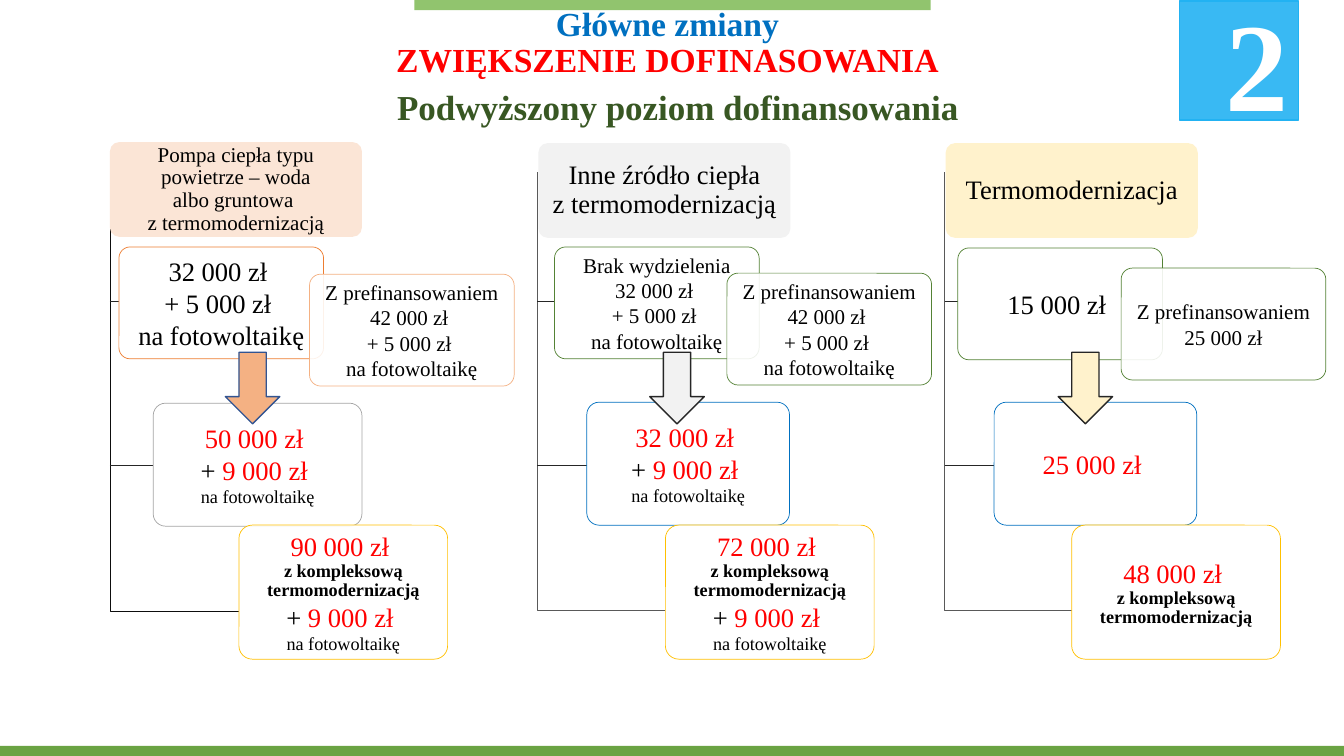
import dataclasses

import pptx
import pptx.dml.color
import pptx.enum.shapes
import pptx.enum.text
import pptx.oxml
import pptx.oxml.ns
import pptx.util

Inches = pptx.util.Inches
Shape = pptx.enum.shapes.MSO_SHAPE
Align = pptx.enum.text.PP_ALIGN
Anchor = pptx.enum.text.MSO_ANCHOR


@dataclasses.dataclass(frozen=True)
class Theme:
    font: str = "Times New Roman"
    number: int = 90
    subtitle: int = 25
    title: int = 24
    large: int = 19
    medium: int = 15
    small: int = 13
    black: str = "000000"
    white: str = "FFFFFF"
    red: str = "FF0000"
    blue: str = "0070C0"
    dark_green: str = "385723"
    green: str = "548235"
    bottom_bar: str = "6AA343"
    top_bar: str = "91C46E"
    badge: str = "39B9F3"
    badge_edge: str = "22B2F2"
    orange: str = "ED7D31"
    light_orange: str = "F4B183"
    peach: str = "FBE5D6"
    cream: str = "FFF2CC"
    pale_gray: str = "F2F2F2"
    gray: str = "A5A5A5"
    gold: str = "FFC000"
    tick: str = "262626"
    spine: str = "595959"
    first_spine: str = "0D0D0D"
    arrow_edge: str = "325491"


theme = Theme()
rgb = pptx.dml.color.RGBColor.from_string


def write(frame, paragraphs, align=Align.CENTER):
    for index, (spacing, size, color, bold, runs) in enumerate(paragraphs):
        paragraph = frame.paragraphs[0] if index == 0 else frame.add_paragraph()
        paragraph.alignment = align
        paragraph.line_spacing = spacing
        paragraph.font.name = theme.font
        paragraph.font.size = pptx.util.Pt(size)
        paragraph.font.bold = bold
        paragraph.font.color.rgb = rgb(color)
        for text, run_size, run_color in runs:
            for line_number, line in enumerate(text.split("\n")):
                if line_number:
                    paragraph.add_line_break()
                if line:
                    run = paragraph.add_run()
                    run.text = line
                    if run_size:
                        run.font.size = pptx.util.Pt(run_size)
                    if run_color:
                        run.font.color.rgb = rgb(run_color)


def draw(kind, box, fill, edge=None, width=0.5, paragraphs=(), opacity=100):
    shape = slide.shapes.add_shape(kind, *map(Inches, box))
    shape.shadow.inherit = False
    shape.fill.solid()
    shape.fill.fore_color.rgb = rgb(fill)
    if opacity < 100:
        swatch = shape.fill._xPr.find(".//" + pptx.oxml.ns.qn("a:srgbClr"))
        swatch.append(pptx.oxml.parse_xml(
            f'<a:alpha {pptx.oxml.ns.nsdecls("a")} val="{opacity * 1000}"/>'))
    if edge:
        shape.line.color.rgb = rgb(edge)
        shape.line.width = pptx.util.Pt(width)
    else:
        shape.line.fill.background()
    if kind == Shape.ROUNDED_RECTANGLE:
        shape.adjustments[0] = 0.1
        frame = shape.text_frame
        frame.word_wrap = True
        frame.vertical_anchor = Anchor.MIDDLE
        frame.margin_left = frame.margin_right = Inches(0.09)
        frame.margin_top = frame.margin_bottom = Inches(0.07)
        write(frame, paragraphs)
    return shape


presentation = pptx.Presentation()
presentation.slide_width = Inches(13.33)
presentation.slide_height = Inches(7.5)
slide = presentation.slides.add_slide(presentation.slide_layouts[5])

draw(Shape.RECTANGLE, (0, 7.4, 13.33, 0.1), theme.bottom_bar)
draw(Shape.RECTANGLE, (4.11, 0, 5.12, 0.1), theme.top_bar)

heading = slide.shapes.title
heading.left, heading.top, heading.width, heading.height = map(Inches, (2.08, 0.04, 9.08, 0.79))
heading.text_frame.vertical_anchor = Anchor.MIDDLE
write(heading.text_frame, [
    (0.9, theme.title, theme.blue, True, [("Główne zmiany", None, None)]),
    (0.9, theme.title, theme.red, True, [("ZWIĘKSZENIE DOFINASOWANIA", None, None)])])

subtitle = slide.shapes.add_textbox(*map(Inches, (3.84, 0.8, 6.67, 0.52)))
subtitle.text_frame.word_wrap = True
write(subtitle.text_frame, [(1.0, theme.subtitle, theme.dark_green, True,
                             [("Podwyższony poziom dofinansowania", None, None)])], Align.LEFT)

solar = "+ 5 000 zł \nna fotowoltaikę"
solar_bonus = (1.0, theme.large, theme.black, False, [
    ("+ ", None, None), ("9 000 zł \n", None, theme.red),
    ("na fotowoltaikę", theme.small, None)])
complex_scope = [(0.9, theme.small, theme.black, True, [(line, None, None)])
                 for line in ("z kompleksową", "termomodernizacją")]

columns = [
    dict(spine=(1.09, 1.73, 6.07, theme.first_spine),
         header=(1.09, 1.41, theme.peach, theme.medium,
                 "Pompa ciepła typu powietrze – woda\nalbo gruntowa \nz termomodernizacją"),
         basic=(1.18, 2.45, theme.orange, theme.large, ["32 000 zł ", solar]),
         prefinanced=(3.07, 2.72, theme.light_orange, ["42 000 zł ", solar]),
         raised=(1.52, 4, 2.07, theme.gray, "50 000 zł "),
         arrow=(2.15, theme.light_orange, theme.arrow_edge),
         complete=(2.37, "90 000 zł "), bonus=[solar_bonus]),
    dict(spine=(5.33, 1.71, 6.06, theme.spine),
         header=(5.34, 1.42, theme.pale_gray, theme.large,
                 "Inne źródło ciepła\nz termomodernizacją"),
         basic=(5.5, 2.45, theme.green, theme.medium,
                ["Brak wydzielenia", "32 000 zł ", solar]),
         prefinanced=(7.21, 2.71, theme.green, ["42 000 zł ", solar]),
         raised=(5.82, 3.99, 2.01, theme.blue, "32 000 zł "),
         arrow=(6.36, theme.pale_gray, theme.tick),
         complete=(6.6, "72 000 zł "), bonus=[solar_bonus]),
    dict(spine=(9.37, 1.71, 6.06, theme.spine),
         header=(9.38, 1.42, theme.cream, theme.large, "Termomodernizacja"),
         basic=(9.5, 2.46, theme.green, theme.large, ["15 000 zł "]),
         prefinanced=(11.12, 2.66, theme.green, ["25 000 zł"]),
         raised=(9.86, 3.99, 2.01, theme.blue, "25 000 zł "),
         arrow=(10.41, theme.cream, theme.tick),
         complete=(10.63, "48 000 zł "), bonus=[]),
]

for column in columns:
    spine_x, spine_top, spine_bottom, spine_color = column["spine"]
    basic_x, basic_y, basic_edge, basic_size, basic_lines = column["basic"]
    raised_x, raised_y, raised_width, raised_edge, raised_amount = column["raised"]
    complete_x, complete_amount = column["complete"]

    outline = slide.shapes.build_freeform(Inches(spine_x), Inches(spine_top))
    outline.add_line_segments([(Inches(spine_x), Inches(spine_bottom)),
                               (Inches(complete_x), Inches(spine_bottom))], close=False)
    spine = outline.convert_to_shape()
    spine.shadow.inherit = False
    spine.fill.background()
    spine.line.color.rgb = rgb(spine_color)
    spine.line.width = pptx.util.Pt(0.5)

    for tick_end, tick_y in ((basic_x, 2.99), (raised_x, 4.62)):
        tick = slide.shapes.add_connector(
            pptx.enum.shapes.MSO_CONNECTOR.STRAIGHT,
            *map(Inches, (spine_x, tick_y, tick_end, tick_y)))
        tick.line.color.rgb = rgb(theme.tick)
        tick.line.width = pptx.util.Pt(0.5)
        tick._element.spPr.append(pptx.oxml.parse_xml(
            f'<a:effectLst {pptx.oxml.ns.nsdecls("a")}/>'))

    draw(Shape.ROUNDED_RECTANGLE, (basic_x, basic_y, 2.03, 1.11), theme.white, basic_edge,
         paragraphs=[(1.0, basic_size, theme.black, False, [(line, None, None)])
                     for line in basic_lines], opacity=90)
    draw(Shape.ROUNDED_RECTANGLE, (raised_x, raised_y, raised_width, 1.22), theme.white, raised_edge,
         paragraphs=[(1.0, theme.large, theme.red, False, [(raised_amount, None, None)]),
                     *column["bonus"]], opacity=90)
    arrow_x, arrow_fill, arrow_edge = column["arrow"]
    arrow = draw(Shape.RIGHT_ARROW, (arrow_x, 3.58, 0.71, 0.54), arrow_fill, arrow_edge, 1)
    arrow.rotation = 90
    draw(Shape.ROUNDED_RECTANGLE, (complete_x, 5.21, 2.07, 1.33), theme.white, theme.gold,
         paragraphs=[(1.0, theme.large, theme.red, False, [(complete_amount, None, None)]),
                     *complex_scope, *column["bonus"]], opacity=90)
    header_x, header_y, header_fill, header_size, header_text = column["header"]
    draw(Shape.ROUNDED_RECTANGLE, (header_x, header_y, 2.5, 0.94), header_fill,
         paragraphs=[(0.9, header_size, theme.black, False, [(header_text, None, None)])])
    prefinanced_x, prefinanced_y, prefinanced_edge, prefinanced_lines = column["prefinanced"]
    draw(Shape.ROUNDED_RECTANGLE, (prefinanced_x, prefinanced_y, 2.03, 1.11), theme.white,
         prefinanced_edge,
         paragraphs=[(1.0, theme.medium, theme.black, False, [(line, None, None)])
                     for line in ["Z prefinansowaniem", *prefinanced_lines]], opacity=90)

draw(Shape.RECTANGLE, (11.7, 0.01, 1.18, 1.18), theme.badge, theme.badge_edge, 1)
badge_number = slide.shapes.add_textbox(*map(Inches, (12.06, -0.19, 1.18, 1.62)))
badge_number.text_frame.word_wrap = True
write(badge_number.text_frame, [(1.0, theme.number, theme.white, True, [("2", None, None)])], Align.LEFT)

presentation.save("out.pptx")
